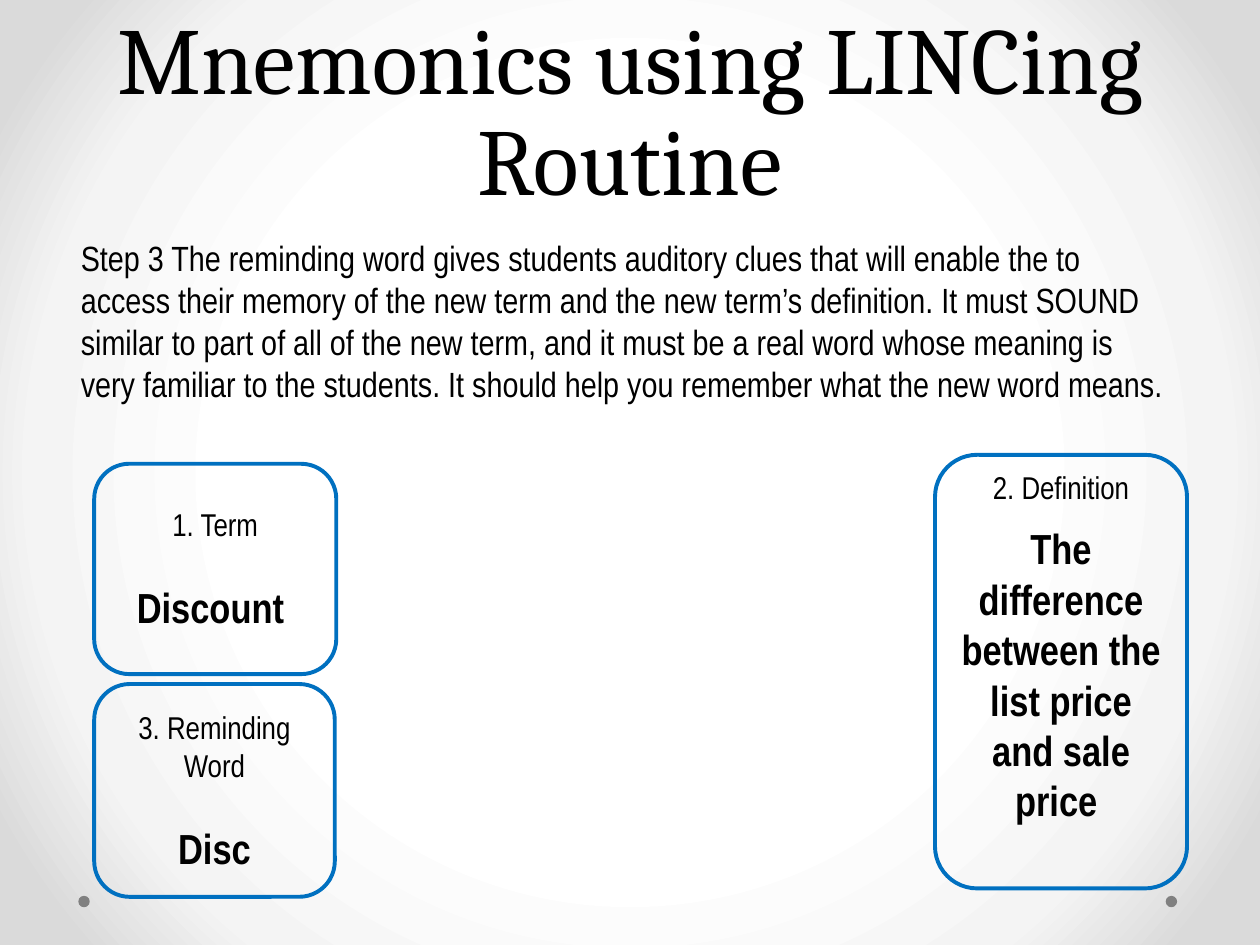
import pptx
import pptx.dml.color
import pptx.enum.shapes
import pptx.enum.text
import pptx.oxml
import pptx.oxml.ns
import pptx.util
from dataclasses import dataclass

Cm = pptx.util.Cm
Pt = pptx.util.Pt
RGB = pptx.dml.color.RGBColor.from_string
SHAPES = pptx.enum.shapes.MSO_SHAPE
ALIGN = pptx.enum.text.PP_ALIGN
ANCHOR = pptx.enum.text.MSO_ANCHOR


@dataclass(frozen=True)
class Theme:
    ink: str = "000000"
    outline: str = "0070C0"
    dot: str = "808080"
    glow: tuple = ((50, "FFFFFF"), (76, "F4F4F4"), (92, "DADADA"))
    heading_font: str = "Cambria"
    body_font: str = "Arial Narrow"
    title: int = 54
    title_line: int = 58
    body: int = 20
    label: int = 18
    answer: int = 24


theme = Theme()


def write(para, text, size, font=theme.body_font, bold=False, align=ALIGN.CENTER, before=0):
    para.alignment = align
    para.space_before = Pt(before)
    span = para.add_run()
    span.text = text
    span.font.name = font
    span.font.size = Pt(size)
    span.font.bold = bold
    span.font.color.rgb = RGB(theme.ink)


deck = pptx.Presentation()
deck.slide_width, deck.slide_height = Cm(25.4), Cm(19.05)
page = deck.slides.add_slide(deck.slide_layouts[5])

# Background: circular glow from the centre
page.background.fill.gradient()
gradient = next(page.element.iter(pptx.oxml.ns.qn("a:gradFill")))
for child in list(gradient):
    gradient.remove(child)
namespace = pptx.oxml.ns.nsdecls("a")
stops = "".join(
    f'<a:gs pos="{place * 1000}"><a:srgbClr val="{colour}"/></a:gs>'
    for place, colour in theme.glow
)
gradient.append(pptx.oxml.parse_xml(f"<a:gsLst {namespace}>{stops}</a:gsLst>"))
gradient.append(pptx.oxml.parse_xml(
    f'<a:path {namespace} path="circle">'
    '<a:fillToRect l="50000" t="50000" r="50000" b="50000"/></a:path>'
))

# Corner dots
for left in (23.5, 1.58):
    dot = page.shapes.add_shape(SHAPES.OVAL, Cm(left), Cm(18.06), Cm(0.23), Cm(0.23))
    dot.shadow.inherit = False
    dot.fill.solid()
    dot.fill.fore_color.rgb = RGB(theme.dot)
    dot.line.fill.background()

# Title
title = page.shapes.title
title.left, title.top, title.width, title.height = Cm(1.27), Cm(0), Cm(22.86), Cm(4.45)
frame = title.text_frame
frame.word_wrap = True
frame.auto_size = pptx.enum.text.MSO_AUTO_SIZE.NONE
frame.vertical_anchor = ANCHOR.BOTTOM
write(frame.paragraphs[0], "Mnemonics using LINCing Routine", theme.title, font=theme.heading_font)
frame.paragraphs[0].line_spacing = Pt(theme.title_line)

# Explanation of the step
box = page.shapes.add_textbox(Cm(1.07), Cm(4.65), Cm(22.86), Cm(12.27))
frame = box.text_frame
frame.word_wrap = True
frame.margin_left = Cm(0.56)
write(
    frame.paragraphs[0],
    "Step 3 The reminding word gives students auditory clues that will enable the to access "
    "their memory of the new term and the new term’s definition. It must SOUND similar to part "
    "of all of the new term, and it must be a real word whose meaning is very familiar to the "
    "students. It should help you remember what the new word means.",
    theme.body, align=ALIGN.LEFT, before=4,
)

# Cards: label, answer, left, top, width, height, gap in points, bottom margin
cards = [
    ("1. Term", "Discount ", 1.9, 9.35, 4.88, 4.24, 22, 0.13),
    ("3. Reminding Word", "Disc", 1.9, 13.79, 4.85, 4.29, 22, 0.13),
    ("2. Definition", "The difference between the list price and sale price ",
     18.85, 9.17, 5.08, 8.74, 10, 1.14),
]
for label, answer, left, top, width, height, gap, bottom in cards:
    card = page.shapes.add_shape(
        SHAPES.ROUNDED_RECTANGLE, Cm(left), Cm(top), Cm(width), Cm(height))
    card.shadow.inherit = False
    card.fill.background()
    card.line.color.rgb = RGB(theme.outline)
    card.line.width = Pt(2.25)
    frame = card.text_frame
    frame.word_wrap = True
    frame.vertical_anchor = ANCHOR.MIDDLE
    frame.margin_bottom = Cm(bottom)
    write(frame.paragraphs[0], label, theme.label)
    write(frame.add_paragraph(), answer, theme.answer, bold=True, before=gap)

deck.save("out.pptx")
